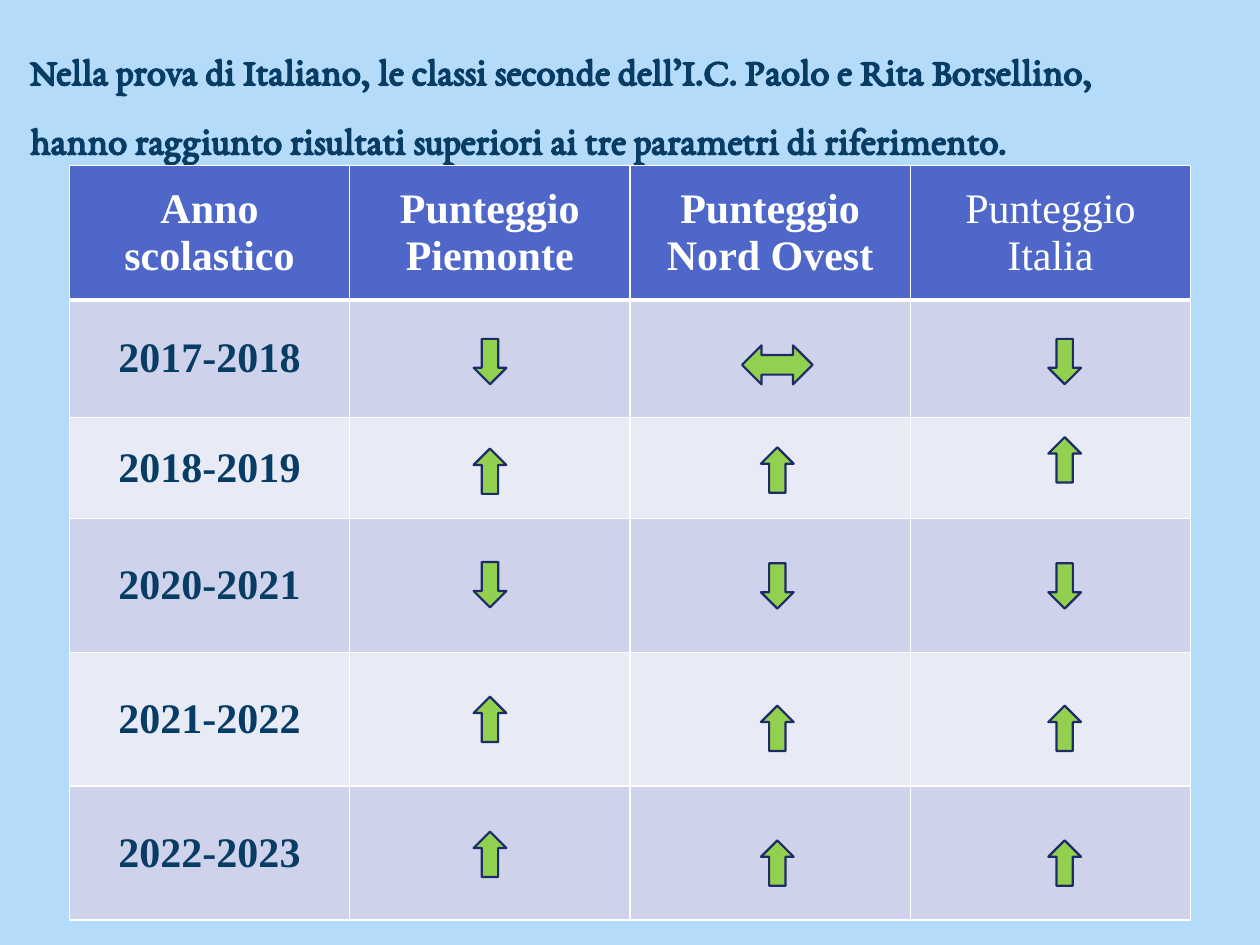
import dataclasses

import lxml.etree
import pptx
import pptx.dml.color
import pptx.enum.shapes
import pptx.enum.text
import pptx.oxml.ns
import pptx.util

Pt = pptx.util.Pt
MSO_SHAPE = pptx.enum.shapes.MSO_SHAPE
PP_ALIGN = pptx.enum.text.PP_ALIGN
MSO_ANCHOR = pptx.enum.text.MSO_ANCHOR


@dataclasses.dataclass(frozen=True)
class Theme:
    background: str = "B4DCFA"
    ink: str = "073C65"
    white: str = "FFFFFF"
    header: str = "4E67C8"
    bands: tuple = ("CFD2EB", "E8EAF5")
    arrow: str = "92D050"
    arrow_line: str = "1D2C66"
    title_font: str = "EB Garamond"
    table_font: str = "Times New Roman"
    title_size: int = 22
    table_size: int = 24


TITLE = ("Nella prova di Italiano, le classi seconde dell’I.C. Paolo e Rita Borsellino, "
         "hanno raggiunto risultati superiori ai tre parametri di riferimento.")
HEADERS = ["Anno scolastico", "Punteggio Piemonte", "Punteggio Nord Ovest", "Punteggio Italia"]

# School year: a (trend, vertical centre) pair for each comparison area
RESULTS = {
    "2017-2018": [("down", 206.6), ("level", 208.5), ("down", 206.6)],
    "2018-2019": [("up", 269.3), ("up", 268.6), ("up", 262.8)],
    "2020-2021": [("down", 334.1), ("down", 334.8), ("down", 334.8)],
    "2021-2022": [("up", 411.1), ("up", 416.2), ("up", 416.2)],
    "2022-2023": [("up", 488.2), ("up", 493.2), ("up", 493.2)],
}
# Trend: preset, width, height, rotation
ARROWS = {
    "up": (MSO_SHAPE.UP_ARROW, 18.7, 25.9, 0),
    "down": (MSO_SHAPE.UP_ARROW, 18.7, 25.9, 180),
    "level": (MSO_SHAPE.LEFT_RIGHT_ARROW, 40.3, 22.3, 0),
}
ROW_HEIGHTS = [77, 67, 57.8, 76.5, 76.5, 76.5]
COLUMN_WIDTH = 160.2
FIRST_ARROW_X, ARROW_STEP = 280, 164.2


def rgb(colour):
    return pptx.dml.color.RGBColor.from_string(colour)


class SlideBuilder:
    def __init__(self, slide, theme):
        self.slide = slide
        self.theme = theme
        fill = slide.background.fill
        fill.solid()
        fill.fore_color.rgb = rgb(theme.background)

    def format_runs(self, paragraph, font, size, colour, bold=True):
        for run in paragraph.runs:
            run.font.name = font
            run.font.size = Pt(size)
            run.font.bold = bold
            run.font.color.rgb = rgb(colour)

    def title(self, text, left, top, width, height):
        heading = self.slide.shapes.title
        heading.left, heading.top = Pt(left), Pt(top)
        heading.width, heading.height = Pt(width), Pt(height)
        frame = heading.text_frame
        frame.text = text
        frame.word_wrap = True
        frame.auto_size = pptx.enum.text.MSO_AUTO_SIZE.SHAPE_TO_FIT_TEXT
        frame.vertical_anchor = MSO_ANCHOR.TOP
        paragraph = frame.paragraphs[0]
        paragraph.alignment = PP_ALIGN.LEFT
        paragraph.line_spacing = 1.5
        self.format_runs(paragraph, self.theme.title_font, self.theme.title_size, self.theme.ink)

    def cell_borders(self, cell, widths):
        """Add white borders; widths maps the sides L, R, T and B to points."""
        properties = cell._tc.get_or_add_tcPr()
        for position, (side, width) in enumerate(widths.items()):
            line = lxml.etree.Element(pptx.oxml.ns.qn(f"a:ln{side}"), w=str(Pt(width)))
            fill = lxml.etree.SubElement(line, pptx.oxml.ns.qn("a:solidFill"))
            lxml.etree.SubElement(fill, pptx.oxml.ns.qn("a:srgbClr"), val=self.theme.white)
            properties.insert(position, line)

    def cell(self, cell, text, fill, colour, top_border, bottom_border, bold):
        cell.text = text
        cell.vertical_anchor = MSO_ANCHOR.MIDDLE
        cell.fill.solid()
        cell.fill.fore_color.rgb = rgb(fill)
        paragraph = cell.text_frame.paragraphs[0]
        paragraph.alignment = PP_ALIGN.CENTER
        self.format_runs(paragraph, self.theme.table_font, self.theme.table_size, colour, bold)
        self.cell_borders(cell, {"L": 1, "R": 1, "T": top_border, "B": bottom_border})

    def table(self, headers, years, left, top):
        theme = self.theme
        rows = [headers] + [[year] + [""] * (len(headers) - 1) for year in years]
        table = self.slide.shapes.add_table(
            len(rows), len(headers), Pt(left), Pt(top),
            Pt(COLUMN_WIDTH * len(headers)), Pt(sum(ROW_HEIGHTS))).table
        for column in table.columns:
            column.width = Pt(COLUMN_WIDTH)
        for r, texts in enumerate(rows):
            table.rows[r].height = Pt(ROW_HEIGHTS[r])
            fill = theme.bands[(r - 1) % 2] if r else theme.header
            colour = theme.ink if r else theme.white
            for c, text in enumerate(texts):
                self.cell(table.cell(r, c), text, fill, colour,
                          top_border=3 if r == 1 else 1,
                          bottom_border=1 if r else 3,
                          bold=text != "Punteggio Italia")

    def arrow(self, trend, centre_x, centre_y):
        preset, width, height, rotation = ARROWS[trend]
        arrow = self.slide.shapes.add_shape(
            preset, Pt(centre_x - width / 2), Pt(centre_y - height / 2), Pt(width), Pt(height))
        arrow.rotation = rotation
        arrow.shadow.inherit = False
        arrow.fill.solid()
        arrow.fill.fore_color.rgb = rgb(self.theme.arrow)
        arrow.line.color.rgb = rgb(self.theme.arrow_line)
        arrow.line.width = Pt(1.25)


def main():
    presentation = pptx.Presentation()
    presentation.slide_width, presentation.slide_height = Pt(720), Pt(540)
    title_only = presentation.slide_layouts[5]
    builder = SlideBuilder(presentation.slides.add_slide(title_only), Theme())
    builder.title(TITLE, 10, 10, 670, 83)
    builder.table(HEADERS, RESULTS, 39.6, 94.5)
    for trends in RESULTS.values():
        for area, (trend, centre_y) in enumerate(trends):
            builder.arrow(trend, FIRST_ARROW_X + area * ARROW_STEP, centre_y)
    presentation.save("out.pptx")


if __name__ == "__main__":
    main()
